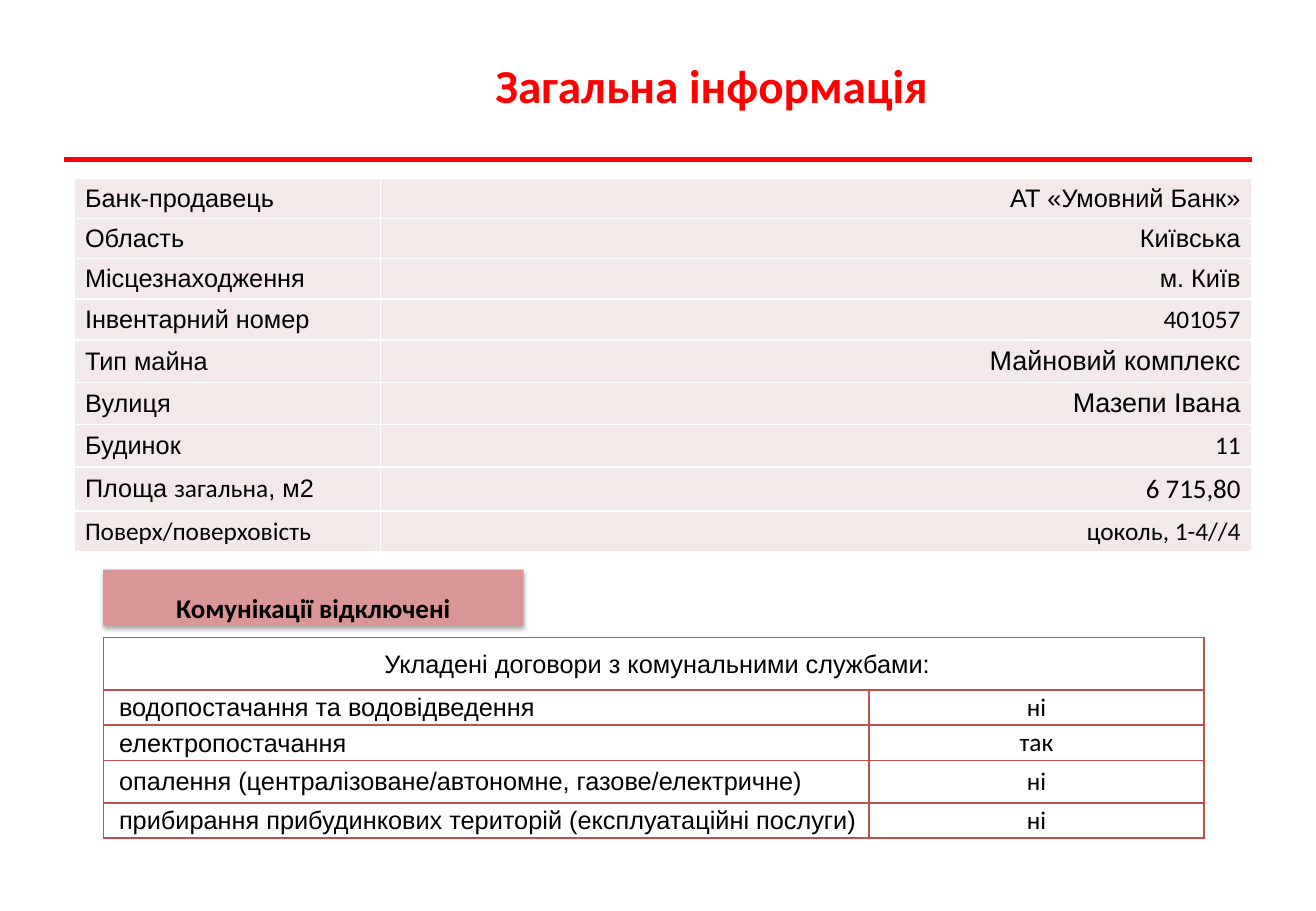
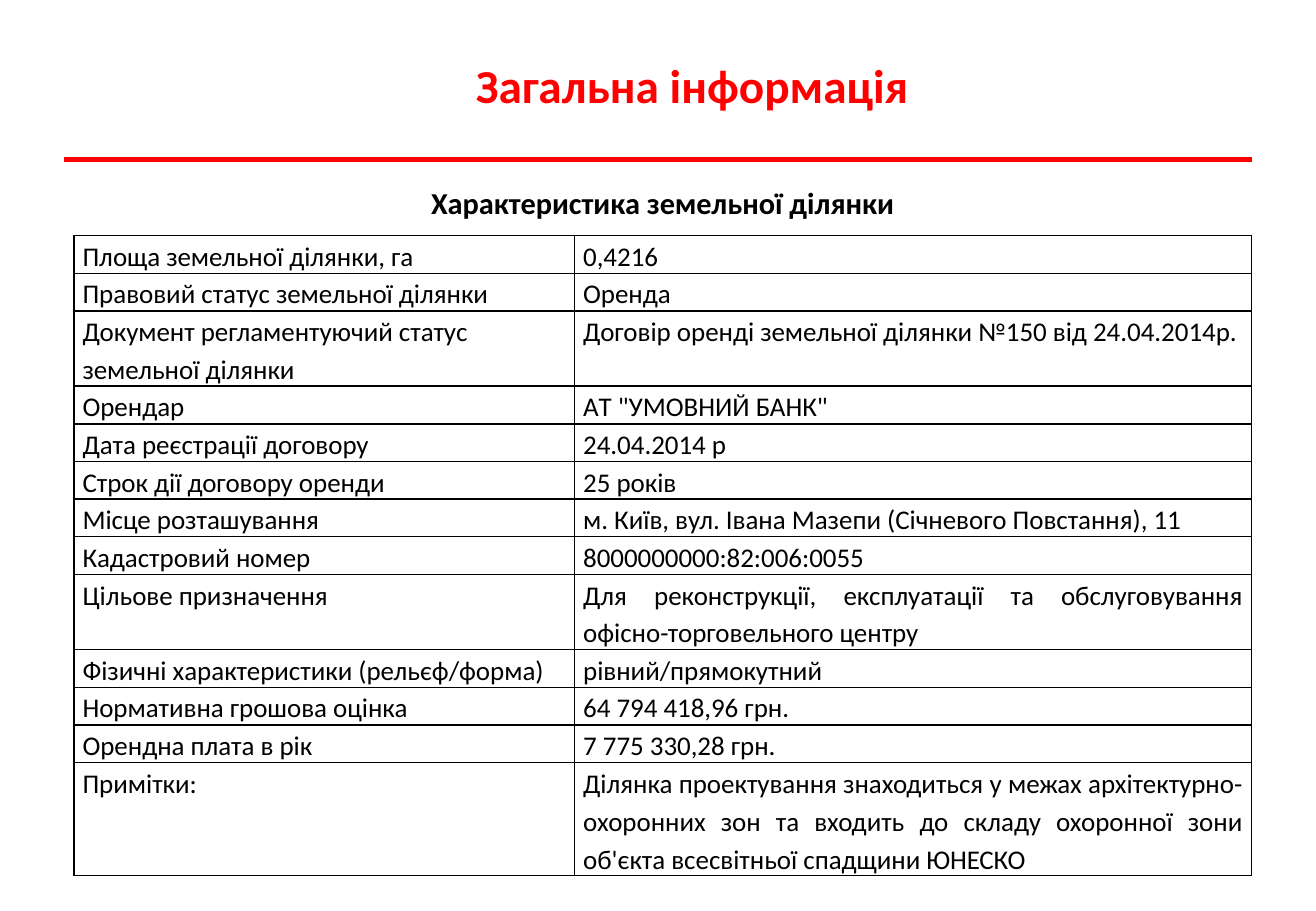
from lxml import etree
from pptx import Presentation
from pptx.dml.color import RGBColor
from pptx.enum import shapes, text
from pptx.oxml import parse_xml
from pptx.oxml.ns import qn
from pptx.util import Inches, Pt

COLORS = {"accent": "FF0000", "text": "000000", "white": "FFFFFF",
          "pale": "F4E9E9", "banner": "D99694", "border": "C0504D"}
A, C = "Arial", "Calibri"
AL = text.PP_ALIGN
MIDDLE, TOP = text.MSO_ANCHOR.MIDDLE, text.MSO_ANCHOR.TOP
NS = 'xmlns:a="http://schemas.openxmlformats.org/drawingml/2006/main"'

# Content: a run is (text, font, size)
TITLE = "Загальна інформація"
PROPERTY = [
    ([("Банк-продавець", A, 15)], [("АТ «Умовний Банк»", A, 15)]),
    ([("Область", A, 15)], [("Київська", A, 15)]),
    ([("Місцезнаходження", A, 15)], [("м. Київ", A, 15)]),
    ([("Інвентарний номер", A, 15)], [("401057", C, 15)]),
    ([("Тип майна", A, 15)], [("Майновий комплекс", A, 16)]),
    ([("Вулиця", A, 15)], [("Мазепи Івана", A, 16)]),
    ([("Будинок", A, 15)], [("11", C, 15)]),
    ([("Площа ", A, 15), ("загальна", C, 15), (", м2", A, 15)], [("6 715,80", C, 16)]),
    ([("Поверх/поверховість", C, 15)], [("цоколь, 1-4//4", C, 15)]),
]
PROPERTY_HEIGHTS = [0.32] * 3 + [0.34, 0.35, 0.34, 0.35, 0.36, 0.34]

BANNER = "Комунікації відключені"
CONTRACTS_HEAD = "Укладені договори з комунальними службами:"
CONTRACTS = [
    ("водопостачання та водовідведення", "ні"),
    ("електропостачання", "так"),
    ("опалення (централізоване/автономне, газове/електричне)", "ні"),
    ("прибирання прибудинкових територій (експлуатаційні послуги)", "ні"),
]
CONTRACTS_HEIGHTS = [0.43, 0.29, 0.29, 0.35, 0.29]

LAND_HEAD = "Характеристика земельної ділянки"
# Label, value, number of text lines
LAND = [
    ("Площа земельної ділянки, га", "0,4216", 1),
    ("Правовий статус земельної ділянки", "Оренда", 1),
    ("Документ регламентуючий статус земельної ділянки",
     "Договір оренді земельної ділянки №150 від 24.04.2014р.", 2),
    ("Орендар", "АT \"УМОВНИЙ БАНК\"", 1),
    ("Дата реєстрації договору", "24.04.2014 р", 1),
    ("Строк дії договору оренди", "25 років", 1),
    ("Місце розташування", "м. Київ, вул. Івана Мазепи (Січневого Повстання), 11", 1),
    ("Кадастровий номер", "8000000000:82:006:0055", 1),
    ("Цільове призначення",
     "Для реконструкції, експлуатації та обслуговування офісно-торговельного центру", 2),
    ("Фізичні характеристики (рельєф/форма)", "рівний/прямокутний", 1),
    ("Нормативна грошова оцінка", "64 794 418,96 грн.", 1),
    ("Орендна плата в рік", "7 775 330,28 грн.", 1),
    ("Примітки:", "Ділянка проектування знаходиться у межах архітектурно-охоронних зон "
     "та входить до складу охоронної зони об'єкта всесвітньої спадщини ЮНЕСКО", 3),
]


def rgb(name):
    return RGBColor.from_string(COLORS[name])


def write(tf, runs, align=AL.LEFT, spacing=None, color="text", bold=False):
    p = tf.paragraphs[0]
    p.alignment = align
    if spacing:
        p.line_spacing = spacing
    for content, font, size in runs:
        r = p.add_run()
        r.text = content
        r.font.name, r.font.size, r.font.bold = font, Pt(size), bold
        r.font.color.rgb = rgb(color)


def add_text(slide, box, runs, anchor=TOP, **style):
    tf = slide.shapes.add_textbox(*map(Inches, box)).text_frame
    tf.word_wrap, tf.vertical_anchor = True, anchor
    write(tf, runs, AL.CENTER, **style)


def add_page(prs, title_width):
    """Blank slide with the shared title and red rule."""
    slide = prs.slides.add_slide(prs.slide_layouts[6])
    rule = slide.shapes.add_connector(shapes.MSO_CONNECTOR.STRAIGHT, Inches(0.53),
                                      Inches(1.31), Inches(10.3), Inches(1.31))
    rule.line.color.rgb, rule.line.width = rgb("accent"), Pt(3)
    etree.SubElement(rule._element.spPr, qn("a:effectLst"))
    add_text(slide, (1.72, 0.29, title_width, 0.81), [(TITLE, C, 28)], MIDDLE,
             color="accent", bold=True)
    return slide


def add_grid(slide, left, top, widths, heights, border, margins, anchor, fill=None):
    """Empty table with uniform borders, margins and fill."""
    box = map(Inches, (left, top, sum(widths), sum(heights)))
    table = slide.shapes.add_table(len(heights), len(widths), *box).table
    table.first_row = table.horz_banding = False
    for col, width in zip(table.columns, widths):
        col.width = Inches(width)
    for row, height in zip(table.rows, heights):
        row.height = Inches(height)
    side, top_in, bottom_in = map(Inches, margins)
    for cell in table.iter_cells():
        cell.margin_left = cell.margin_right = side
        cell.margin_top, cell.margin_bottom = top_in, bottom_in
        cell.vertical_anchor = anchor
        for edge in "LRTB":
            cell._tc.get_or_add_tcPr().append(parse_xml(
                f'<a:ln{edge} {NS} w="{Pt(1)}"><a:solidFill>'
                f'<a:srgbClr val="{COLORS[border]}"/></a:solidFill></a:ln{edge}>'))
        if fill:
            cell.fill.solid()
            cell.fill.fore_color.rgb = rgb(fill)
        else:
            cell.fill.background()
    return table


def build_property(prs):
    slide = add_page(prs, 8.27)

    # Property details
    table = add_grid(slide, 0.61, 1.47, (2.52, 7.17), PROPERTY_HEIGHTS, "white",
                     (0.09, 0.04, 0.04), MIDDLE, "pale")
    for i, (label, value) in enumerate(PROPERTY):
        write(table.cell(i, 0).text_frame, label)
        write(table.cell(i, 1).text_frame, value, AL.RIGHT)

    # Utility contracts
    table = add_grid(slide, 0.85, 5.25, (6.3, 2.76), CONTRACTS_HEIGHTS, "border",
                     (0.01, 0.01, 0), MIDDLE)
    head = table.cell(0, 0)
    head.merge(table.cell(0, 1))
    head.margin_left = Inches(0.07)
    write(head.text_frame, [(CONTRACTS_HEAD, A, 15)], AL.CENTER)
    for i, (service, state) in enumerate(CONTRACTS, 1):
        table.cell(i, 0).margin_left = Inches(0.13)
        write(table.cell(i, 0).text_frame, [(service, A, 15)])
        write(table.cell(i, 1).text_frame, [(state, C, 15)], AL.CENTER)

    # Banner with a soft shadow
    sp = slide.shapes.add_shape(shapes.MSO_SHAPE.RECTANGLE,
                                *map(Inches, (0.85, 4.69, 3.46, 0.46)))
    sp.shadow.inherit = False
    sp.fill.solid()
    sp.fill.fore_color.rgb = rgb("banner")
    sp.line.fill.background()
    sp._element.spPr.find(qn("a:effectLst")).append(parse_xml(
        f'<a:outerShdw {NS} blurRad="{Pt(3.1)}" dist="{Pt(1.8)}" dir="5400000" '
        f'rotWithShape="0"><a:srgbClr val="{COLORS["text"]}"><a:alpha val="35000"/>'
        '</a:srgbClr></a:outerShdw>'))
    sp.text_frame.word_wrap, sp.text_frame.vertical_anchor = True, TOP
    write(sp.text_frame, [(BANNER, C, 16)], AL.CENTER, 1.5, bold=True)


def build_land(prs):
    slide = add_page(prs, 7.95)
    heights = [0.31 * lines for *_, lines in LAND]
    table = add_grid(slide, 0.61, 1.94, (4.12, 5.57), heights, "text",
                     (0.07, 0, 0), TOP)
    for i, (label, value, _) in enumerate(LAND):
        write(table.cell(i, 0).text_frame, [(label, C, 16)], spacing=1.15)
        write(table.cell(i, 1).text_frame, [(value, C, 16)], AL.JUSTIFY, 1.15)
    add_text(slide, (3.29, 1.47, 4.33, 0.4), [(LAND_HEAD, C, 18)], bold=True)


def main():
    prs = Presentation()
    prs.slide_width, prs.slide_height = Inches(10.83), Inches(7.5)
    build_property(prs)
    build_land(prs)
    prs.save("out.pptx")


if __name__ == "__main__":
    main()
